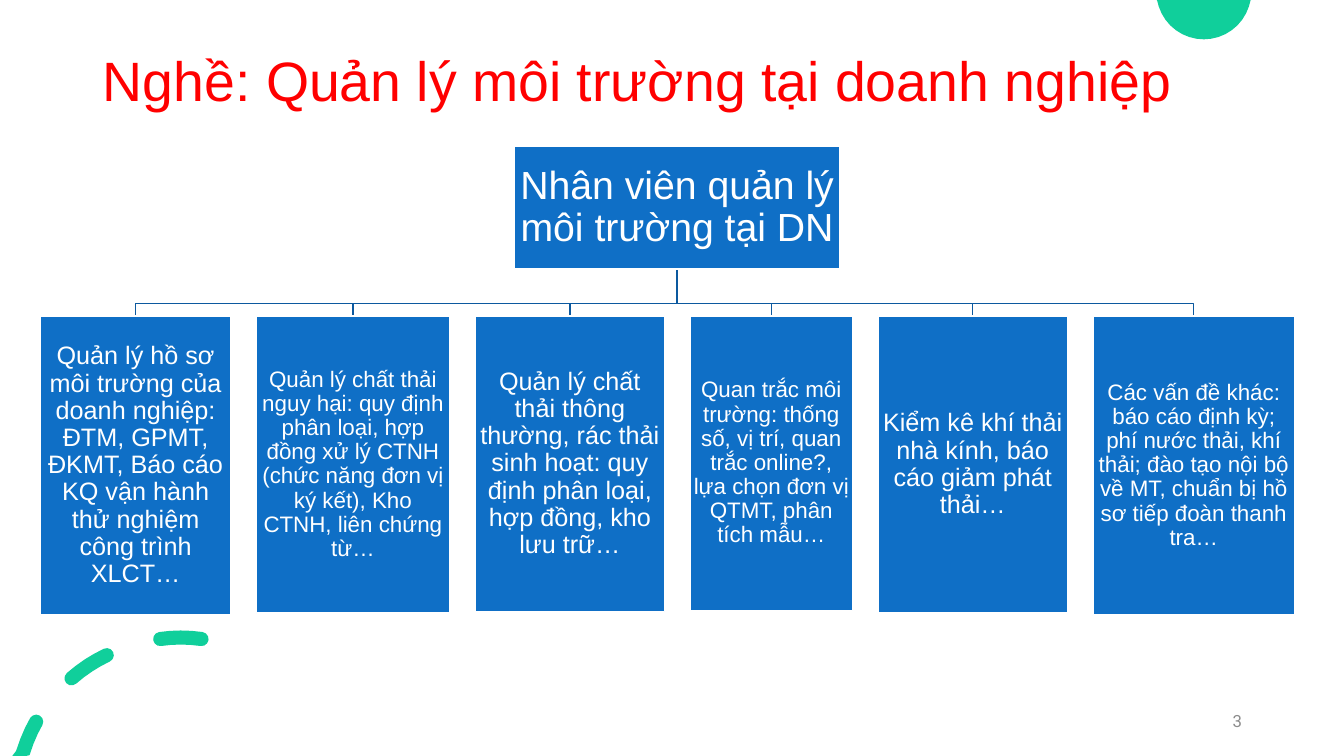
"""Build a slide with an org chart of an environmental manager's duties."""
from math import atan2, cos, pi, sin

from pptx import Presentation
from pptx.dml.color import RGBColor
from pptx.enum.shapes import MSO_SHAPE
from pptx.enum.text import MSO_ANCHOR, MSO_AUTO_SIZE, PP_ALIGN
from pptx.util import Inches, Pt

COLS, ROWS = 40, 22.5
CELL = 1 / 3
COLORS = {"title": "FF0000", "box": "0F6FC6", "white": "FFFFFF",
          "line": "0C599F", "green": "10CF9B", "grey": "8C8C8C"}
ROOT = (15.32, 4.35, 9.66, 3.66)
LEFT, TOP, GAP, BUS = 1.2, 9.4, 0.76, 9.03
TASKS = [
    (5.67, 8.91, 18, "Quản lý hồ sơ môi trường của doanh nghiệp: ĐTM, GPMT, "
     "ĐKMT, Báo cáo KQ vận hành thử nghiệm công trình XLCT…"),
    (5.75, 8.85, 16, "Quản lý chất thải nguy hại: quy định phân loại, hợp đồng "
     "xử lý CTNH (chức năng đơn vị ký kết), Kho CTNH, liên chứng từ…"),
    (5.64, 8.8, 18, "Quản lý chất thải thông thường, rác thải sinh hoạt: "
     "quy định phân loại, hợp đồng, kho lưu trữ…"),
    (4.83, 8.77, 16, "Quan trắc môi trường: thống số, vị trí, quan trắc "
     "online?, lựa chọn đơn vị QTMT, phân tích mẫu…"),
    (5.64, 8.85, 18, "Kiểm kê khí thải nhà kính, báo cáo giảm phát thải…"),
    (6, 8.91, 16, "Các vấn đề khác: báo cáo định kỳ; phí nước thải, khí thải; "
     "đào tạo nội bộ về MT, chuẩn bị hồ sơ tiếp đoàn thanh tra…"),
]
DASHES = [
    ((1.08, 21.48), (0.78, 21.99), (0.57, 22.8)),
    ((2.13, 20.19), (2.61, 19.77), (3.18, 19.5)),
    ((4.77, 19.02), (5.37, 18.93), (6, 19.02)),
]


def cells(*vals):
    """Turn grid cells into slide lengths."""
    return [Inches(val * CELL) for val in vals]


def color(name):
    """Look up a named colour."""
    return RGBColor.from_string(COLORS[name])


def write(shape, text, size, name, align, font="Arial", space=None):
    """Put one formatted, middle-anchored paragraph in a shape."""
    frame = shape.text_frame
    frame.text = text
    frame.word_wrap = True
    frame.auto_size = MSO_AUTO_SIZE.NONE
    frame.vertical_anchor = MSO_ANCHOR.MIDDLE
    para = frame.paragraphs[0]
    para.alignment = align
    para.line_spacing = space
    face = para.runs[0].font
    face.name, face.size = font, Pt(size)
    face.color.rgb = color(name)


def paint(shape, fill=None, line=None):
    """Set fill and line, and drop the shadow."""
    shape.shadow.inherit = False
    for part, name in ((shape.fill, fill), (shape.line.fill, line)):
        if name:
            part.solid()
            part.fore_color.rgb = color(name)
        else:
            part.background()
    if line:
        shape.line.width = Pt(1)


def add_box(slide, place, text, size):
    """Add one box of the chart."""
    box = slide.shapes.add_shape(MSO_SHAPE.RECTANGLE, *cells(*place))
    paint(box, "box", "white")
    write(box, text, size, "white", PP_ALIGN.CENTER, space=0.9)
    frame = box.text_frame
    frame.margin_left = frame.margin_right = Inches(0.02)
    frame.margin_top = frame.margin_bottom = Inches(0.02)


def add_path(slide, *loops, close=True):
    """Add an outline of one or more loops, cut off at the slide's edges."""
    build = None
    for loop in loops:
        first, *rest = [cells(x, min(max(y, 0), ROWS)) for x, y in loop]
        if build:
            build.move_to(*first)
        else:
            build = slide.shapes.build_freeform(*first)
        build.add_line_segments(rest, close=close)
    return build.convert_to_shape()


def arc(mid, size, start, steps=6):
    """List the points of a half circle."""
    turns = [start + pi * i / steps for i in range(steps + 1)]
    return [(mid[0] + size * cos(t), mid[1] + size * sin(t)) for t in turns]


def curve(start, bend, end, steps=4):
    """List points of a bent stroke, each with its heading."""
    for i in range(steps + 1):
        t = i / steps
        x, y = [(1 - t) ** 2 * a + 2 * t * (1 - t) * b + t * t * c
                for a, b, c in zip(start, bend, end)]
        dx, dy = [(1 - t) * (b - a) + t * (c - b)
                  for a, b, c in zip(start, bend, end)]
        yield (x, y), atan2(dy, dx)


def stroke(dash, size=0.21):
    """Outline a bent stroke with round ends."""
    track = list(curve(*dash))
    sides = [[(x + size * cos(turn + side), y + size * sin(turn + side))
              for (x, y), turn in track] for side in (-pi / 2, pi / 2)]
    (head, first), (tail, last) = track[0], track[-1]
    return (sides[0] + arc(tail, size, last - pi / 2)
            + sides[1][::-1] + arc(head, size, first + pi / 2))


def add_chart(slide):
    """Add the lines, then the root and the tasks."""
    mid, foot = ROOT[0] + ROOT[2] / 2, ROOT[1] + ROOT[3]
    lefts = [LEFT + sum(task[0] + GAP for task in TASKS[:i])
             for i in range(len(TASKS))]
    for left, task in reversed(list(zip(lefts, TASKS))):
        x = left + task[0] / 2
        bend = [(mid, foot), (mid, BUS), (x, BUS), (x, TOP)]
        paint(add_path(slide, bend, close=False), line="line")
    add_box(slide, ROOT, "Nhân viên quản lý môi trường tại DN", 28)
    for left, (wide, high, size, text) in zip(lefts, TASKS):
        add_box(slide, (left, TOP, wide, high), text, size)


def main():
    """Build and save the slide."""
    deck = Presentation()
    deck.slide_width, deck.slide_height = cells(COLS, ROWS)
    slide = deck.slides.add_slide(deck.slide_layouts[5])
    paint(add_path(slide, arc((35.83, -0.24), 1.41, 0, 20)), "green")
    paint(add_path(slide, *map(stroke, DASHES)), "green")
    title = slide.shapes.title
    title.left, title.top, title.width, title.height = cells(
        2.76, 1.2, 34.5, 2.58)
    write(title, "Nghề: Quản lý môi trường tại doanh nghiệp", 39.6, "title",
          PP_ALIGN.LEFT, space=0.9)
    number = slide.shapes.add_textbox(*cells(28.26, 20.85, 9, 1.2))
    write(number, "3", 12, "grey", PP_ALIGN.RIGHT, "Roboto")
    add_chart(slide)
    deck.save("out.pptx")


if __name__ == "__main__":
    main()
